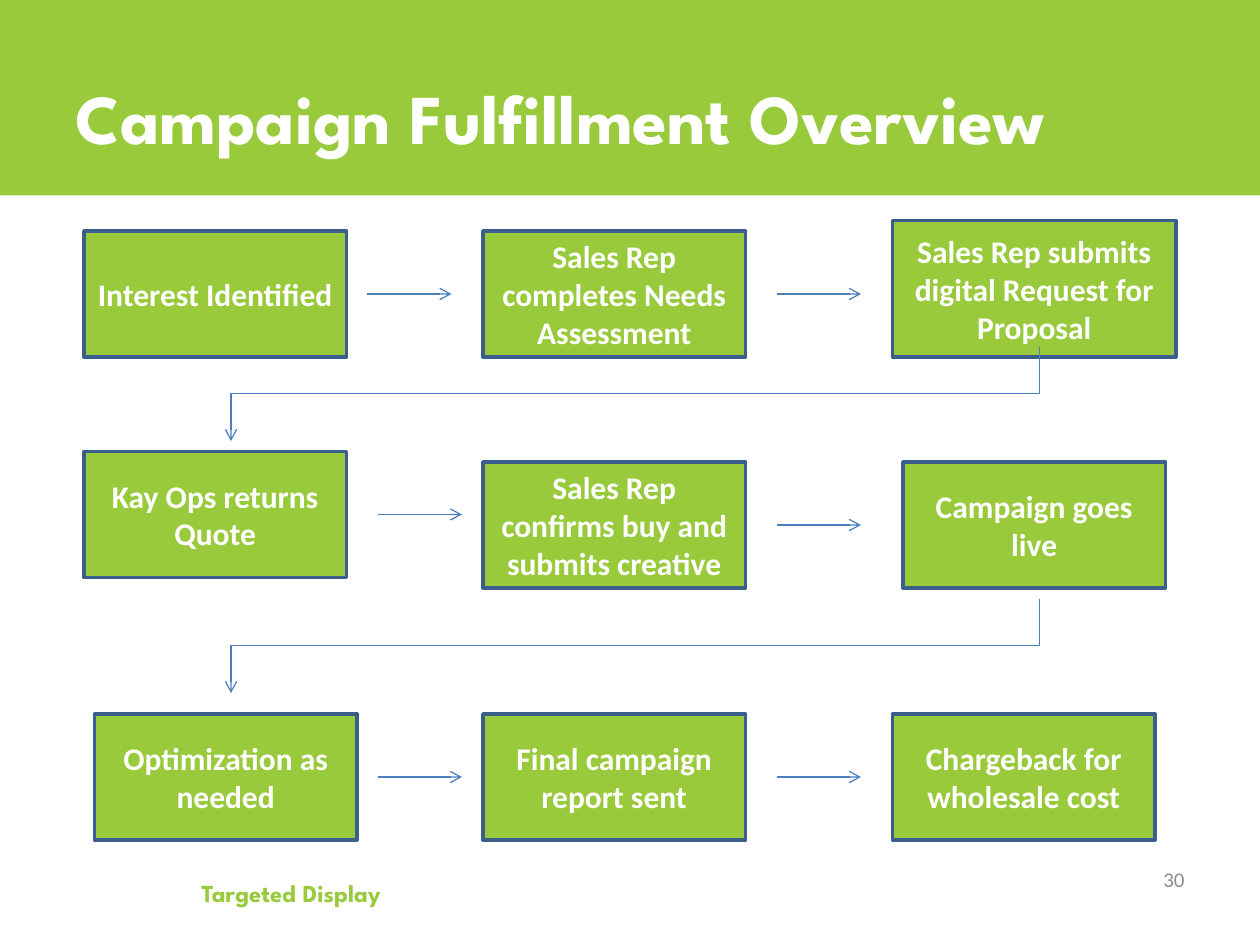
"""Build the campaign fulfillment overview slide."""
from lxml.etree import SubElement
from pptx import Presentation
from pptx.dml.color import RGBColor
from pptx.enum.shapes import MSO_CONNECTOR, MSO_SHAPE
from pptx.enum.text import MSO_ANCHOR, PP_ALIGN
from pptx.oxml.ns import qn
from pptx.util import Pt

COLORS = {
    "green": "98CA3C",
    "outline": "3A5F8C",
    "arrow": "4B7EBC",
    "white": "FFFFFF",
    "gray": "8C8C8C",
}
STEP_WIDTH, STEP_HEIGHT = 150, 72
ARROW_LENGTH = 48

ROWS = [
    {
        "steps": [
            ("Interest Identified", 48, 132, STEP_WIDTH, STEP_HEIGHT),
            ("Sales Rep completes Needs Assessment", 276, 132, STEP_WIDTH, STEP_HEIGHT),
            ("Sales Rep submits digital Request for Proposal", 510, 126, 162, 78),
        ],
        "arrow_starts": [210, 444],
    },
    {
        "steps": [
            ("Kay Ops returns Quote", 48, 258, STEP_WIDTH, STEP_HEIGHT),
            ("Sales Rep confirms buy and submits creative", 276, 264, STEP_WIDTH, STEP_HEIGHT),
            ("Campaign goes live", 516, 264, STEP_WIDTH, STEP_HEIGHT),
        ],
        "arrow_starts": [216, 444],
    },
    {
        "steps": [
            ("Optimization as needed", 54, 408, STEP_WIDTH, STEP_HEIGHT),
            ("Final campaign report sent", 276, 408, STEP_WIDTH, STEP_HEIGHT),
            ("Chargeback for wholesale cost", 510, 408, STEP_WIDTH, STEP_HEIGHT),
        ],
        "arrow_starts": [216, 444],
    },
]


def color(name):
    """Return the named color."""
    return RGBColor.from_string(COLORS[name])


def write_text(shape, text, size, font="Calibri", fill="white", bold=True,
               align=PP_ALIGN.LEFT, anchor=MSO_ANCHOR.MIDDLE, wrap=True):
    """Write one formatted paragraph into a shape."""
    frame = shape.text_frame
    frame.word_wrap = wrap
    frame.vertical_anchor = anchor
    paragraph = frame.paragraphs[0]
    paragraph.alignment = align
    run = paragraph.add_run()
    run.text = text
    run.font.name = font
    run.font.size = Pt(size)
    run.font.bold = bold
    run.font.color.rgb = color(fill)


def add_box(slide, left, top, width, height, outline=None):
    """Add a green rectangle with an optional outline."""
    shape = slide.shapes.add_shape(
        MSO_SHAPE.RECTANGLE, Pt(left), Pt(top), Pt(width), Pt(height))
    shape.shadow.inherit = False
    shape.fill.solid()
    shape.fill.fore_color.rgb = color("green")
    if outline:
        shape.line.color.rgb = color(outline)
        shape.line.width = Pt(2)
    else:
        shape.line.fill.background()
    return shape


def add_label(slide, text, left, top, width, height, size, **text_format):
    """Add a text box with formatted text."""
    box = slide.shapes.add_textbox(Pt(left), Pt(top), Pt(width), Pt(height))
    write_text(box, text, size, **text_format)


def add_arrow(slide, kind, start_x, start_y, end_x, end_y):
    """Add a thin connector with an open arrowhead at its end."""
    connector = slide.shapes.add_connector(
        kind, Pt(start_x), Pt(start_y), Pt(end_x), Pt(end_y))
    connector.line.color.rgb = color("arrow")
    connector.line.width = Pt(0.75)
    SubElement(connector.line._get_or_add_ln(), qn("a:tailEnd"), type="arrow")
    SubElement(connector._element.spPr, qn("a:effectLst"))
    return connector


def add_return_arrow(slide, left, top, width, height):
    """Add an elbow arrow from the top right to the bottom left of a box."""
    center_x, center_y = left + width / 2, top + height / 2
    connector = add_arrow(
        slide, MSO_CONNECTOR.ELBOW,
        center_x - height / 2, center_y - width / 2,
        center_x + height / 2, center_y + width / 2)
    connector._element.spPr.find(qn("a:xfrm")).set("rot", "5400000")


def add_header(slide, left, top, width, height):
    """Add the title band."""
    add_box(slide, left, top, width, height)
    add_label(slide, "Campaign Fulfillment Overview", left + 36, top + 21.6,
              width - 72, 90, 40, font="League Spartan")


def add_row(slide, steps, arrow_starts):
    """Add one row of steps and the arrows between them."""
    for text, *box in steps:
        shape = add_box(slide, *box, outline="outline")
        write_text(shape, text, 18, align=PP_ALIGN.CENTER)
    for start, (_, _, top, _, height) in zip(arrow_starts, steps):
        middle = top + height / 2
        add_arrow(slide, MSO_CONNECTOR.STRAIGHT,
                  start, middle, start + ARROW_LENGTH, middle)


def add_footer(slide, left, top, width, height):
    """Add the section name and the slide number."""
    add_label(slide, "Targeted Display", left + 72, top + 10, 129, 24.5, 14,
              font="League Spartan", fill="green", anchor=MSO_ANCHOR.TOP, wrap=False)
    add_label(slide, "30", left + width - 168, top, 168, height, 12,
              fill="gray", bold=False, align=PP_ALIGN.RIGHT)


def main():
    """Build and save the presentation."""
    presentation = Presentation()
    presentation.slide_width, presentation.slide_height = Pt(720), Pt(540)
    slide = presentation.slides.add_slide(presentation.slide_layouts[6])
    add_header(slide, 0, 0, 720, 111.6)
    add_footer(slide, 36, 488, 648, 28.8)
    for row in ROWS:
        add_row(slide, **row)
    for top in (198, 342):
        add_return_arrow(slide, 132, top, 462, 54)
    presentation.save("out.pptx")


if __name__ == "__main__":
    main()
